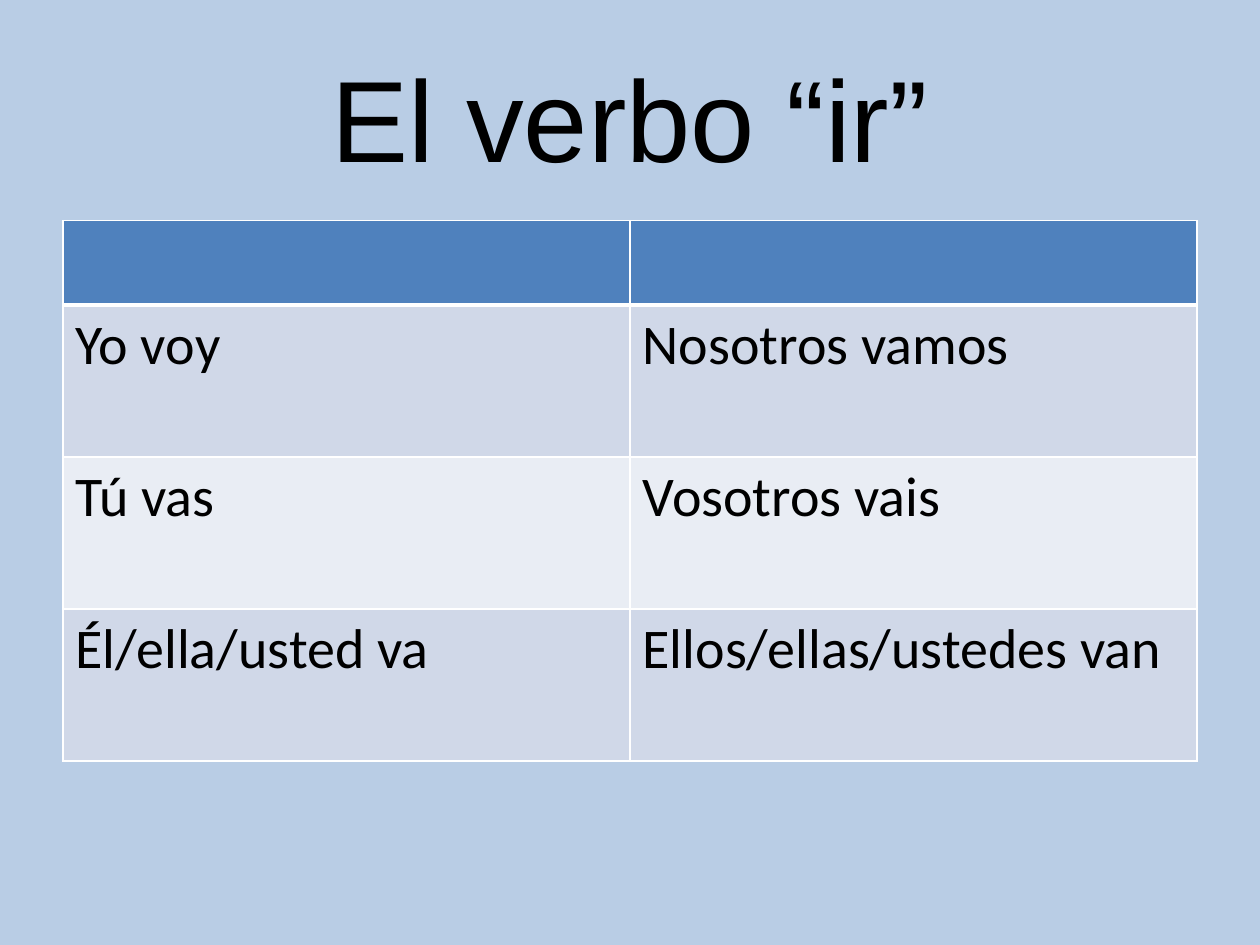
from lxml.etree import SubElement as Sub
from pptx import Presentation
from pptx.dml.color import RGBColor
from pptx.enum.text import MSO_ANCHOR as Anchor, PP_ALIGN as Align
from pptx.oxml.ns import qn
from pptx.util import Inches, Pt

HEAD = "4F81BD"
BANDS = ["D0D8E8", "E9EDF4"]
VERBS = [
    ("Yo voy", "Nosotros vamos"),
    ("Tú vas", "Vosotros vais"),
    ("Él/ella/usted va", "Ellos/ellas/ustedes van"),
]


def color(code):
    return RGBColor.from_string(code)


def write(frame, text, size, font="Calibri", ink="000000", align=Align.LEFT):
    para = frame.paragraphs[0]
    para.alignment = align
    run = para.add_run()
    run.text = text
    run.font.size = Pt(size)
    run.font.name = font
    run.font.bold = False
    run.font.color.rgb = color(ink)


def border(cell, top=1, bottom=1, ink="FFFFFF"):
    """Draw the four cell edges; call before the cell is filled."""
    props = cell._tc.get_or_add_tcPr()
    for side, width in (("L", 1), ("R", 1), ("T", top), ("B", bottom)):
        line = Sub(props, qn(f"a:ln{side}"), w=str(Pt(width)))
        Sub(Sub(line, qn("a:solidFill")), qn("a:srgbClr"), val=ink)


def paint(cell, code):
    cell.fill.solid()
    cell.fill.fore_color.rgb = color(code)


def add_title(slide, text, left, top, width, height):
    box = slide.shapes.add_textbox(left, top, width, height)
    frame = box.text_frame
    frame.word_wrap = True
    frame.vertical_anchor = Anchor.MIDDLE
    write(frame, text, 66, font="Arial", align=Align.CENTER)


def add_verbs(slide, rows, left, top, width, height):
    """Place an empty header row above evenly spaced, banded verb rows."""
    count = len(rows)
    table = slide.shapes.add_table(count + 1, 2, left, top, width, height).table
    head = Inches(0.67)
    table.rows[0].height = head
    for cell in table.rows[0].cells:
        border(cell, bottom=3)
        paint(cell, HEAD)
    for i, texts in enumerate(rows):
        row = table.rows[i + 1]
        row.height = (height - head) // count
        for cell, text in zip(row.cells, texts):
            border(cell, top=1 if i else 3)
            paint(cell, BANDS[i % 2])
            write(cell.text_frame, text, 32)


def main():
    deck = Presentation()
    deck.slide_width, deck.slide_height = Inches(10), Inches(7.5)
    slide = deck.slides.add_slide(deck.slide_layouts[6])
    back = slide.background.fill
    back.solid()
    back.fore_color.rgb = color("B9CDE5")
    left, width = Inches(0.5), Inches(9)
    add_title(slide, "El verbo “ir”", left, Inches(0.3), width, Inches(1.25))
    add_verbs(slide, VERBS, left, Inches(1.75), width, Inches(4.29))
    deck.save("out.pptx")


if __name__ == "__main__":
    main()
